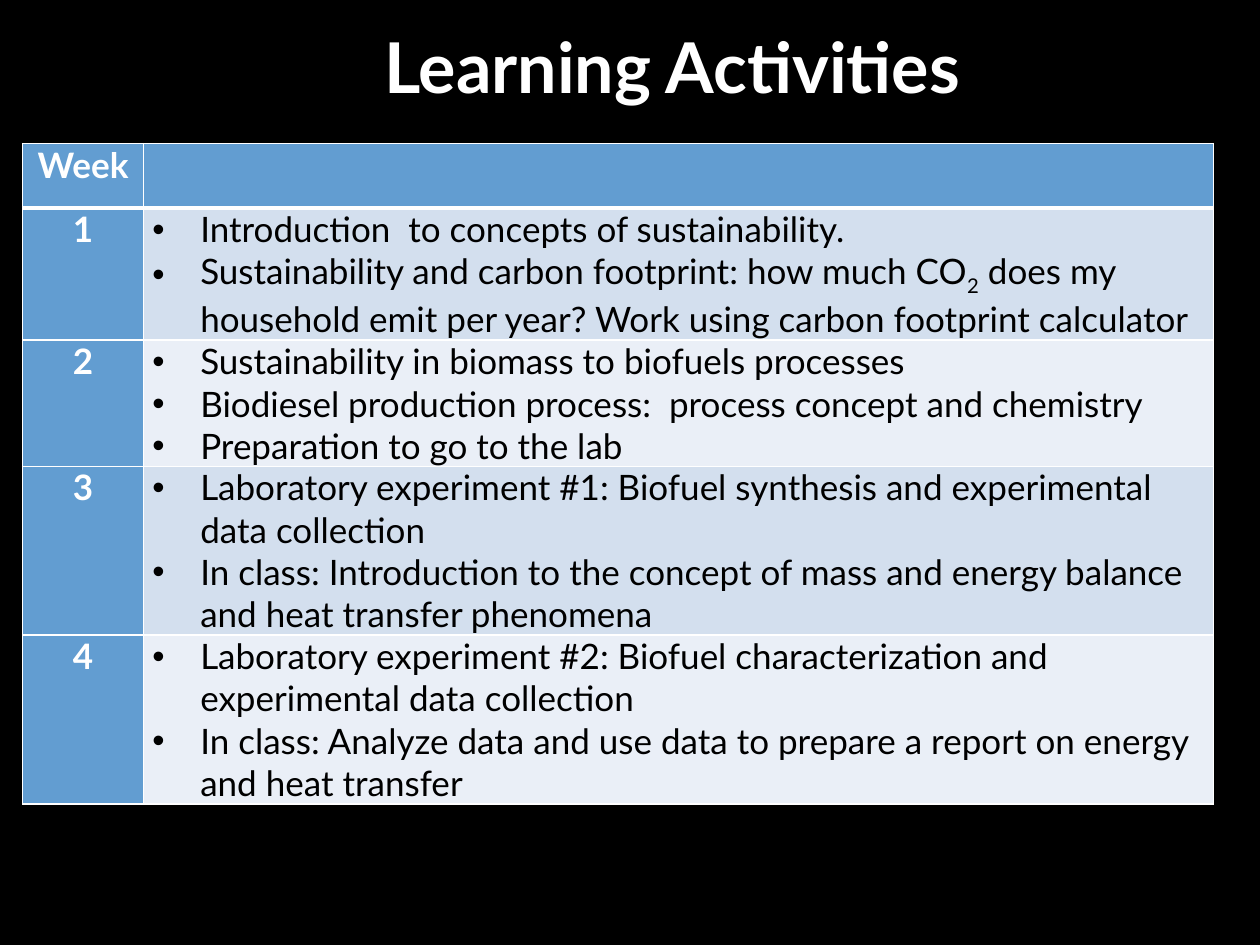
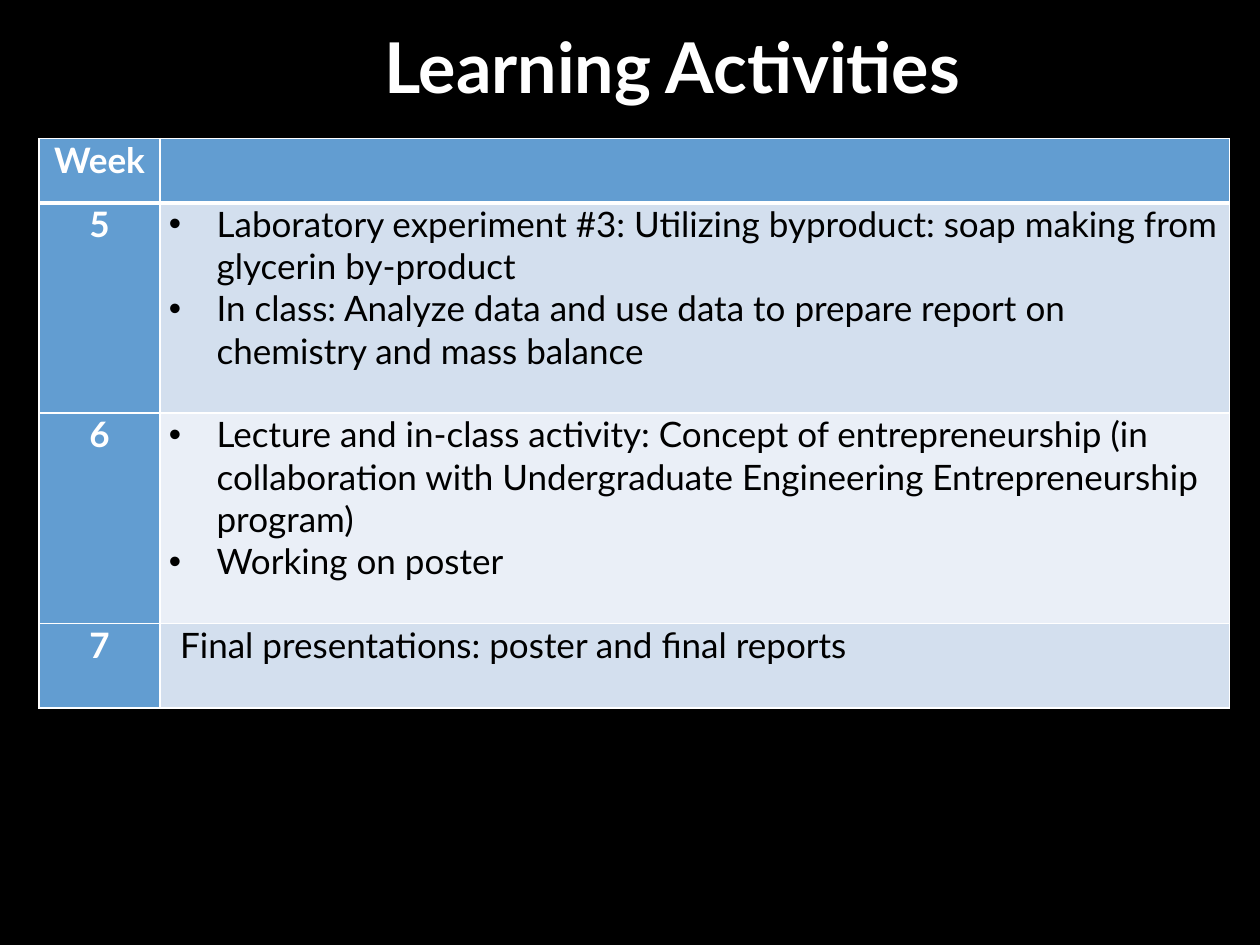
"""Build two slides listing the weekly learning activities of a course."""
from dataclasses import dataclass

import lxml.etree
import pptx
import pptx.dml.color
import pptx.enum.text
import pptx.oxml
import pptx.oxml.ns
import pptx.presentation
import pptx.slide
import pptx.table
import pptx.text.text
import pptx.util

Inches = pptx.util.Inches
PP_ALIGN = pptx.enum.text.PP_ALIGN

FONT = "Lato"
BLACK, WHITE = "000000", "FFFFFF"
HEADER_BLUE = "629DD1"
BANDS = ("D3DFEE", "EAEFF7")
BODY_SIZE, TITLE_SIZE = 20, 40
COLUMN_WIDTHS = (0.96, 8.49)
HEADER_HEIGHT = 0.51
THIN, THICK = 1, 3
SUBSCRIPT_MARK = "|"


@dataclass(frozen=True)
class Week:
    """One week of the schedule with its row height in inches."""
    number: int
    height: float
    activities: tuple[str, ...]
    bulleted: bool = True


@dataclass(frozen=True)
class Schedule:
    """The weeks on one slide and the place of their table in inches."""
    left: float
    top: float
    weeks: tuple[Week, ...]


SCHEDULES = (
    Schedule(0.18, 1.14, (
        Week(1, 1.05, (
            "Introduction  to concepts of sustainability.",
            "Sustainability and carbon footprint: how much CO|2| does my household "
            "emit per year? Work using carbon footprint calculator")),
        Week(2, 1.0, (
            "Sustainability in biomass to biofuels processes",
            "Biodiesel production process:  process concept and chemistry",
            "Preparation to go to the lab")),
        Week(3, 1.34, (
            "Laboratory experiment #1: Biofuel synthesis and experimental data collection",
            "In class: Introduction to the concept of mass and energy balance "
            "and heat transfer phenomena")),
        Week(4, 1.34, (
            "Laboratory experiment #2: Biofuel characterization and experimental "
            "data collection",
            "In class: Analyze data and use data to prepare a report on energy "
            "and heat transfer")),
    )),
    Schedule(0.31, 1.1, (
        Week(5, 1.67, (
            "Laboratory experiment #3: Utilizing byproduct: soap making from "
            "glycerin by-product",
            "In class: Analyze data and use data to prepare report on chemistry "
            "and mass balance")),
        Week(6, 1.67, (
            "Lecture and in-class activity: Concept of entrepreneurship (in collaboration "
            "with Undergraduate Engineering Entrepreneurship program)",
            "Working on poster")),
        Week(7, 0.67, ("Final presentations: poster and final reports",), bulleted=False),
    )),
)


def rgb(value: str) -> pptx.dml.color.RGBColor:
    """Turn a hex string into a colour."""
    return pptx.dml.color.RGBColor.from_string(value)


def style_font(font: pptx.text.text.Font, size: int, color: str, bold: bool) -> None:
    """Apply the deck font with a size, colour and weight."""
    font.name = FONT
    font.size = pptx.util.Pt(size)
    font.bold = bold
    font.color.rgb = rgb(color)


def write_label(paragraph: pptx.text.text._Paragraph, text: str, size: int) -> None:
    """Write a centred bold white label."""
    paragraph.text = text
    paragraph.alignment = PP_ALIGN.CENTER
    for run in paragraph.runs:
        style_font(run.font, size, WHITE, True)


def write_activity(paragraph: pptx.text.text._Paragraph, text: str, bulleted: bool) -> None:
    """Write one activity, lowering the parts between subscript marks."""
    properties = paragraph._p.get_or_add_pPr()
    properties.set("marL", str(Inches(0.38 if bulleted else 0.09)))
    properties.set("indent", str(Inches(-0.38 if bulleted else 0)))
    if bulleted:
        qn = pptx.oxml.ns.qn
        lxml.etree.SubElement(properties, qn("a:buFont")).set("typeface", "Arial")
        lxml.etree.SubElement(properties, qn("a:buChar")).set("char", "•")
    for index, part in enumerate(text.split(SUBSCRIPT_MARK)):
        run = paragraph.add_run()
        run.text = part
        style_font(run.font, BODY_SIZE, BLACK, False)
        if index % 2:
            run._r.get_or_add_rPr().set("baseline", "-25000")


def style_cell(cell: pptx.table._Cell, fill: str, top: int, bottom: int) -> None:
    """Set the margins, fill and white borders of a cell."""
    cell.margin_left = cell.margin_right = Inches(0.07)
    cell.margin_top = cell.margin_bottom = 0
    cell.fill.solid()
    cell.fill.fore_color.rgb = rgb(fill)
    properties = cell._tc.get_or_add_tcPr()
    edges = {"lnL": THIN, "lnR": THIN, "lnT": top, "lnB": bottom}
    for index, (edge, width) in enumerate(edges.items()):
        properties.insert(index, pptx.oxml.parse_xml(
            f'<a:{edge} {pptx.oxml.ns.nsdecls("a")} w="{pptx.util.Pt(width)}">'
            f'<a:solidFill><a:srgbClr val="{WHITE}"/></a:solidFill></a:{edge}>'))


def add_title(slide: pptx.slide.Slide, text: str) -> None:
    """Add the slide title, resting on the bottom of its box."""
    title = slide.shapes.add_textbox(
        Inches(1.4), Inches(-1.02), Inches(7.87), Inches(1.87)).text_frame
    title.word_wrap = True
    title.vertical_anchor = pptx.enum.text.MSO_ANCHOR.BOTTOM
    title.margin_top = title.margin_bottom = 0
    write_label(title.paragraphs[0], text, TITLE_SIZE)


def add_schedule(slide: pptx.slide.Slide, schedule: Schedule) -> None:
    """Add the table of weeks and activities."""
    heights = (HEADER_HEIGHT, *(week.height for week in schedule.weeks))
    table = slide.shapes.add_table(
        len(heights), len(COLUMN_WIDTHS), Inches(schedule.left), Inches(schedule.top),
        Inches(sum(COLUMN_WIDTHS)), Inches(sum(heights))).table
    for column, width in zip(table.columns, COLUMN_WIDTHS):
        column.width = Inches(width)
    for row, height in zip(table.rows, heights):
        row.height = Inches(height)

    for column in range(len(COLUMN_WIDTHS)):
        style_cell(table.cell(0, column), HEADER_BLUE, THIN, THICK)
    write_label(table.cell(0, 0).text_frame.paragraphs[0], "Week", BODY_SIZE)

    for row, week in enumerate(schedule.weeks, start=1):
        number, activities = table.cell(row, 0), table.cell(row, 1)
        top = THICK if row == 1 else THIN
        style_cell(number, HEADER_BLUE, top, THIN)
        style_cell(activities, BANDS[(row - 1) % len(BANDS)], top, THIN)
        write_label(number.text_frame.paragraphs[0], str(week.number), BODY_SIZE)
        frame = activities.text_frame
        for index, text in enumerate(week.activities):
            paragraph = frame.add_paragraph() if index else frame.paragraphs[0]
            write_activity(paragraph, text, week.bulleted)


def add_slide(deck: pptx.presentation.Presentation, schedule: Schedule) -> None:
    """Add a black slide with the title and one schedule."""
    slide = deck.slides.add_slide(deck.slide_layouts[6])
    slide.background.fill.solid()
    slide.background.fill.fore_color.rgb = rgb(BLACK)
    add_title(slide, "Learning Activities")
    add_schedule(slide, schedule)


def main() -> None:
    """Build and save the deck."""
    deck = pptx.Presentation()
    deck.slide_width, deck.slide_height = Inches(10), Inches(7.5)
    for schedule in SCHEDULES:
        add_slide(deck, schedule)
    deck.save("out.pptx")


if __name__ == "__main__":
    main()
